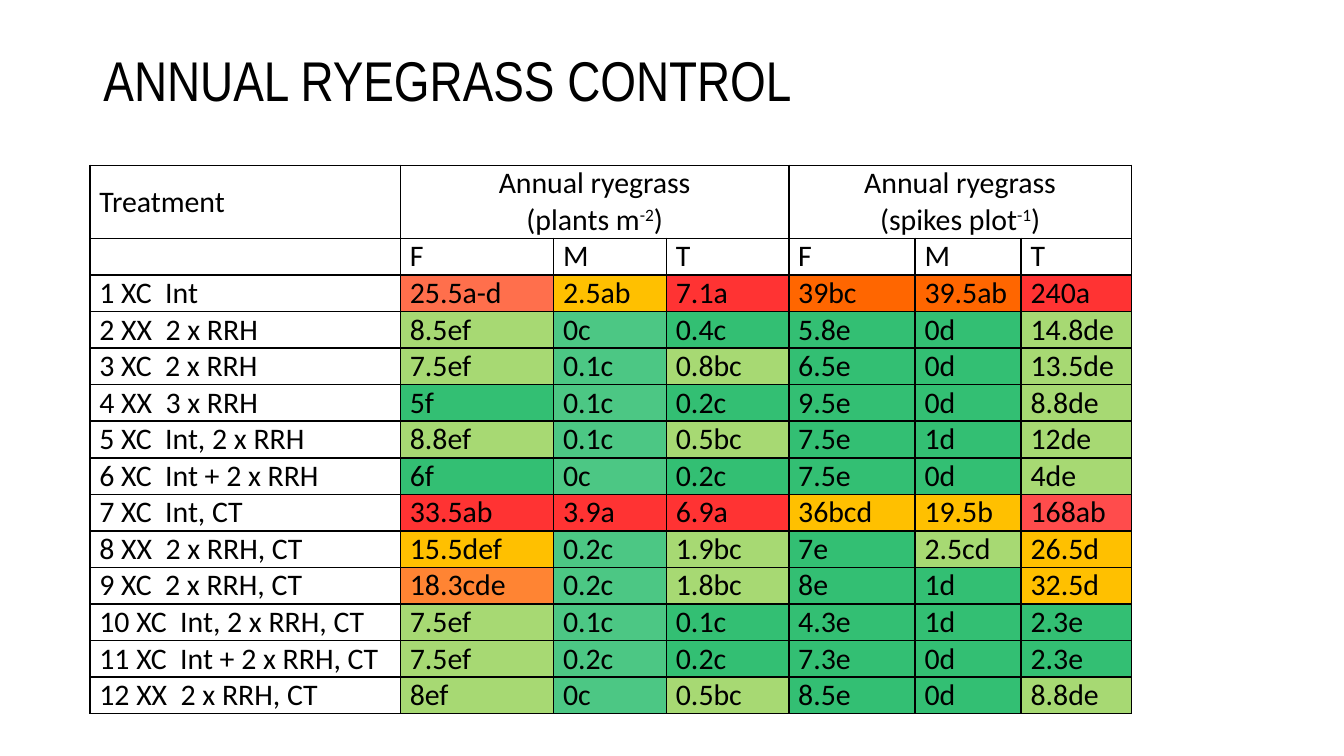
from lxml.etree import SubElement
from pptx import Presentation
from pptx.dml.color import RGBColor
from pptx.enum.text import MSO_ANCHOR, PP_ALIGN
from pptx.oxml import parse_xml
from pptx.oxml.ns import nsdecls, qn
from pptx.util import Inches, Pt

BLACK = RGBColor(0x00, 0x00, 0x00)
GREEN = RGBColor(0x00, 0xB0, 0x50)
LIME = RGBColor(0x92, 0xD0, 0x50)
AMBER = RGBColor(0xFF, 0xC0, 0x00)
ORANGE = RGBColor(0xFF, 0x66, 0x00)
CORAL = RGBColor(0xFF, 0x33, 0x00)
RED = RGBColor(0xFF, 0x00, 0x00)

# Rating letter -> colour and opacity in percent
RATINGS = {
    "G": (GREEN, 80), "g": (GREEN, 70), "L": (LIME, 80), "A": (AMBER, 100),
    "O": (ORANGE, 100), "o": (ORANGE, 80), "C": (CORAL, 70),
    "R": (RED, 80), "r": (RED, 70),
}

SLIDE_WIDTH = 10
SLIDE_HEIGHT = SLIDE_WIDTH * 9 / 16
COLUMN_WIDTHS = [2.31, 1.14, 0.84, 0.91, 0.94, 0.79, 0.82]
LINE_HEIGHT = 0.27

# Group heading -> first column; ^ marks a superscript
GROUPS = {
    "Annual ryegrass\n(plants m^-2^)": 1,
    "Annual ryegrass\n(spikes plot^-1^)": 4,
}

# Treatment, values, rating of each value
TREATMENTS = [
    ("1 XC  Int", "25.5a-d 2.5ab 7.1a 39bc 39.5ab 240a", "CAROOR"),
    ("2 XX  2 x RRH", "8.5ef 0c 0.4c 5.8e 0d 14.8de", "LgGGGL"),
    ("3 XC  2 x RRH", "7.5ef 0.1c 0.8bc 6.5e 0d 13.5de", "LgLGGL"),
    ("4 XX  3 x RRH", "5f 0.1c 0.2c 9.5e 0d 8.8de", "GgGGGL"),
    ("5 XC  Int, 2 x RRH", "8.8ef 0.1c 0.5bc 7.5e 1d 12de", "LgLGGL"),
    ("6 XC  Int + 2 x RRH", "6f 0c 0.2c 7.5e 0d 4de", "GgGGGL"),
    ("7 XC  Int, CT", "33.5ab 3.9a 6.9a 36bcd 19.5b 168ab", "RRRAAr"),
    ("8 XX  2 x RRH, CT", "15.5def 0.2c 1.9bc 7e 2.5cd 26.5d", "AgLGLA"),
    ("9 XC  2 x RRH, CT", "18.3cde 0.2c 1.8bc 8e 1d 32.5d", "ogLGGA"),
    ("10 XC  Int, 2 x RRH, CT", "7.5ef 0.1c 0.1c 4.3e 1d 2.3e", "LgGGGG"),
    ("11 XC  Int + 2 x RRH, CT", "7.5ef 0.2c 0.2c 7.3e 0d 2.3e", "LgGGGG"),
    ("12 XX  2 x RRH, CT", "8ef 0c 0.5bc 8.5e 0d 8.8de", "LgLGGL"),
]


class SlideBuilder:
    title_font, title_size = "Arial Narrow", Pt(30)
    table_font, table_size = "Calibri", Pt(16)
    border_width = Pt(1)

    def __init__(self, slide):
        self.slide = slide

    def format_font(self, font, name, size):
        font.name = name
        font.size = size
        font.bold = False
        font.color.rgb = BLACK

    def title(self, text, left, top, width, height):
        shape = self.slide.shapes.title
        shape.left, shape.top = Inches(left), Inches(top)
        shape.width, shape.height = Inches(width), Inches(height)
        text_frame = shape.text_frame
        text_frame.text = text
        text_frame.vertical_anchor = MSO_ANCHOR.TOP
        text_frame.margin_top = Inches(0.05)
        paragraph = text_frame.paragraphs[0]
        paragraph.alignment = PP_ALIGN.LEFT
        self.format_font(paragraph.runs[0].font, self.title_font, self.title_size)

    def table(self, left, top, column_widths, row_heights):
        table = self.slide.shapes.add_table(
            len(row_heights), len(column_widths), Inches(left), Inches(top),
            Inches(sum(column_widths)), Inches(sum(row_heights))).table
        table.first_row = table.horz_banding = False
        for column, width in zip(table.columns, column_widths):
            column.width = Inches(width)
        for row, height in zip(table.rows, row_heights):
            row.height = Inches(height)
        for cell in table.iter_cells():
            self.cell(cell)
        return table

    def cell(self, cell):
        cell.margin_left = cell.margin_right = Inches(0.07)
        cell.margin_top = cell.margin_bottom = 0
        cell.vertical_anchor = MSO_ANCHOR.MIDDLE
        cell.fill.background()
        # Borders come before the fill
        properties = cell._tc.get_or_add_tcPr()
        for index, side in enumerate("LRTB"):
            properties.insert(index, parse_xml(
                f'<a:ln{side} {nsdecls("a")} w="{int(self.border_width)}"><a:solidFill>'
                f'<a:srgbClr val="{BLACK}"/></a:solidFill></a:ln{side}>'))
        # Text size while the cell is empty
        paragraph = cell.text_frame.paragraphs[0]
        SubElement(paragraph._p, qn("a:endParaRPr"), sz=str(self.table_size.centipoints))

    def cell_text(self, cell, text, alignment=PP_ALIGN.LEFT):
        cell.text_frame.text = text
        for paragraph, line in zip(cell.text_frame.paragraphs, text.split("\n")):
            paragraph.alignment = alignment
            first_part, *other_parts = line.split("^")
            paragraph.runs[0].text = first_part
            for part in other_parts:
                paragraph.add_run().text = part
            for index, run in enumerate(paragraph.runs):
                self.format_font(run.font, self.table_font, self.table_size)
                if index % 2:
                    run._r.get_or_add_rPr().set("baseline", "30000")

    def cell_fill(self, cell, color, opacity):
        cell.fill.solid()
        cell.fill.fore_color.rgb = color
        if opacity < 100:
            color_element = cell._tc.tcPr.find(qn("a:solidFill"))[0]
            SubElement(color_element, qn("a:alpha"), val=str(opacity * 1000))


def main():
    presentation = Presentation()
    presentation.slide_width = Inches(SLIDE_WIDTH)
    presentation.slide_height = Inches(SLIDE_HEIGHT)
    builder = SlideBuilder(presentation.slides.add_slide(presentation.slide_layouts[5]))

    builder.title("ANNUAL RYEGRASS CONTROL", 0.67, 0.29, 7.48, 0.94)

    # Two heading rows: groups, then the measures within each group
    row_heights = [2 * LINE_HEIGHT] + [LINE_HEIGHT] * (1 + len(TREATMENTS))
    table = builder.table(0.67, 1.23, COLUMN_WIDTHS, row_heights)
    builder.cell_text(table.cell(0, 0), "Treatment")
    for heading, first in GROUPS.items():
        table.cell(0, first).merge(table.cell(0, first + 2))
        builder.cell_text(table.cell(0, first), heading, PP_ALIGN.CENTER)
        for offset, measure in enumerate("FMT"):
            builder.cell_text(table.cell(1, first + offset), measure)

    # Treatment rows with rated values
    for row, (treatment, values, ratings) in enumerate(TREATMENTS, start=2):
        builder.cell_text(table.cell(row, 0), treatment)
        for column, (value, rating) in enumerate(zip(values.split(), ratings), start=1):
            cell = table.cell(row, column)
            builder.cell_text(cell, value)
            builder.cell_fill(cell, *RATINGS[rating])

    presentation.save("out.pptx")


if __name__ == "__main__":
    main()
